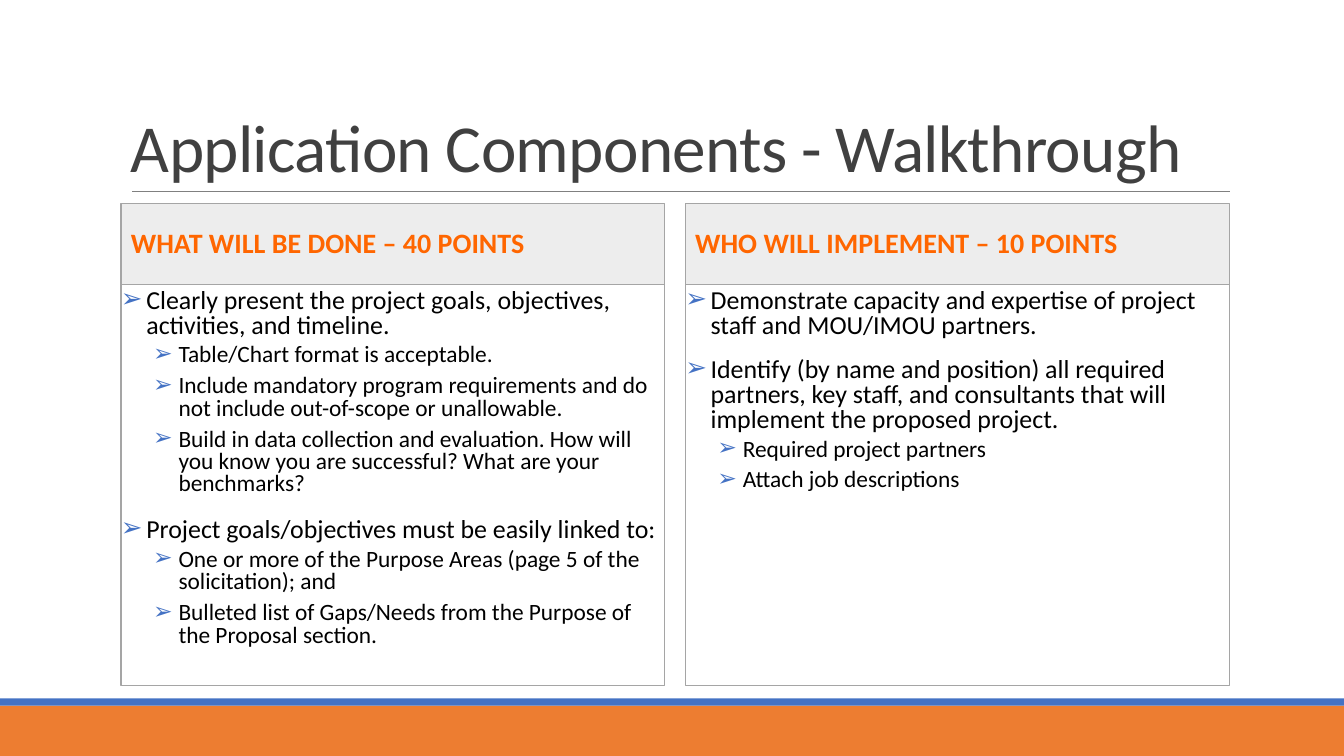
from dataclasses import dataclass

from lxml.etree import SubElement
from pptx import Presentation
from pptx.dml.color import RGBColor
from pptx.enum.shapes import MSO_CONNECTOR, MSO_SHAPE
from pptx.enum.text import MSO_ANCHOR as Anchor, PP_ALIGN as Align
from pptx.oxml.ns import qn
from pptx.util import Cm, Pt

FONT = "Calibri"
BLUE, ORANGE = "4472C4", "ED7D31"
BORDER, HEADER_FILL, HEADER_TEXT = "A5A5A5", "EDEDED", "FF6600"


@dataclass(frozen=True)
class Level:
    size: float
    left: float
    before: float
    after: float


@dataclass(frozen=True)
class Panel:
    heading: str
    points: tuple[tuple[int, str], ...]


LEVELS = (Level(18.5, 0.64, 12, 2), Level(16.7, 1.45, 2, 4))
HANGING = 0.64

PANELS = (
    Panel("WHAT WILL BE DONE – 40 POINTS", (
        (0, "Clearly present the project goals, objectives, activities, and timeline."),
        (1, "Table/Chart format is acceptable."),
        (1, "Include mandatory program requirements and do not include "
            "out-of-scope or unallowable."),
        (1, "Build in data collection and evaluation. How will you know you are "
            "successful? What are your benchmarks?"),
        (0, "Project goals/objectives must be easily linked to:"),
        (1, "One or more of the Purpose Areas (page 5 of the solicitation); and"),
        (1, "Bulleted list of Gaps/Needs from the Purpose of the Proposal section."),
    )),
    Panel("WHO WILL IMPLEMENT – 10 POINTS", (
        (0, "Demonstrate capacity and expertise of project staff and MOU/IMOU partners."),
        (0, "Identify (by name and position) all required partners, key staff, and "
            "consultants that will implement the proposed project."),
        (1, "Required project partners"),
        (1, "Attach job descriptions"),
    )),
)


def color(value: str) -> RGBColor:
    return RGBColor.from_string(value)


def add_box(page, left: float, top: float, width: float, height: float,
            fill: str | None = None, line: str | None = None):
    box = page.shapes.add_shape(MSO_SHAPE.RECTANGLE, Cm(left), Cm(top), Cm(width), Cm(height))
    box.shadow.inherit = False
    if fill:
        box.fill.solid()
        box.fill.fore_color.rgb = color(fill)
    else:
        box.fill.background()
    if line:
        box.line.color.rgb = color(line)
        box.line.width = Pt(0.75)
    else:
        box.line.fill.background()
    box.text_frame.word_wrap = True
    return box


def style(para, size: float, ink: str, spacing: float, before: float = 0,
          after: float = 0, bold: bool = False) -> None:
    para.alignment = Align.LEFT
    para.line_spacing = spacing
    para.space_before, para.space_after = Pt(before), Pt(after)
    para.font.name, para.font.size, para.font.bold = FONT, Pt(size), bold
    para.font.color.rgb = color(ink)


def add_bullet(para, left: float) -> None:
    properties = para._p.get_or_add_pPr()
    properties.set("marL", str(Cm(left)))
    properties.set("indent", str(-Cm(HANGING)))
    bullet_color = SubElement(properties, qn("a:buClr"))
    SubElement(bullet_color, qn("a:srgbClr"), val=BLUE)
    SubElement(properties, qn("a:buFont"), typeface=FONT)
    SubElement(properties, qn("a:buChar"), char="➢")


def add_title(page, text: str) -> None:
    frame = page.shapes.add_textbox(Cm(3.05), Cm(0.79), Cm(27.94), Cm(4.04)).text_frame
    frame.word_wrap = True
    frame.vertical_anchor = Anchor.BOTTOM
    para = frame.paragraphs[0]
    span = para.add_run()
    span.text = text
    style(para, 48, "404040", 0.85)
    span._r.get_or_add_rPr().set("spc", "-50")


def add_rule(page) -> None:
    rule = page.shapes.add_connector(
        MSO_CONNECTOR.STRAIGHT, Cm(3.33), Cm(4.83), Cm(31), Cm(4.83))
    rule.line.color.rgb = color("808080")
    rule.line.width = Pt(0.5)
    SubElement(rule._element.spPr, qn("a:effectLst"))


def add_panel(page, panel: Panel, left: float, width: float) -> None:
    header = add_box(page, left, 5.13, width, 2.04, HEADER_FILL, BORDER).text_frame
    header.vertical_anchor = Anchor.MIDDLE
    header.text = panel.heading
    style(header.paragraphs[0], 20, HEADER_TEXT, 0.9, 12, 2, bold=True)

    body = add_box(page, left, 7.17, width, 10.11, line=BORDER).text_frame
    body.vertical_anchor = Anchor.TOP
    body.margin_left = body.margin_right = 0
    for index, (depth, text) in enumerate(panel.points):
        para = body.add_paragraph() if index else body.paragraphs[0]
        para.text = text
        para.level = depth
        level = LEVELS[depth]
        add_bullet(para, level.left)
        style(para, level.size, "000000", 0.8, level.before, level.after)


def main() -> None:
    deck = Presentation()
    deck.slide_width, deck.slide_height = Cm(33.87), Cm(19.05)
    page = deck.slides.add_slide(deck.slide_layouts[6])

    # Footer bands
    add_box(page, 0, 17.78, 33.87, 1.27, ORANGE)
    add_box(page, 0, 17.6, 33.87, 0.18, BLUE)

    # Title and the rule below it
    add_rule(page)
    add_title(page, "Application Components - Walkthrough")

    # Two panels side by side
    width, gap = 13.71, 0.51
    for column, panel in enumerate(PANELS):
        add_panel(page, panel, 3.05 + column * (width + gap), width)

    deck.save("out.pptx")


if __name__ == "__main__":
    main()
